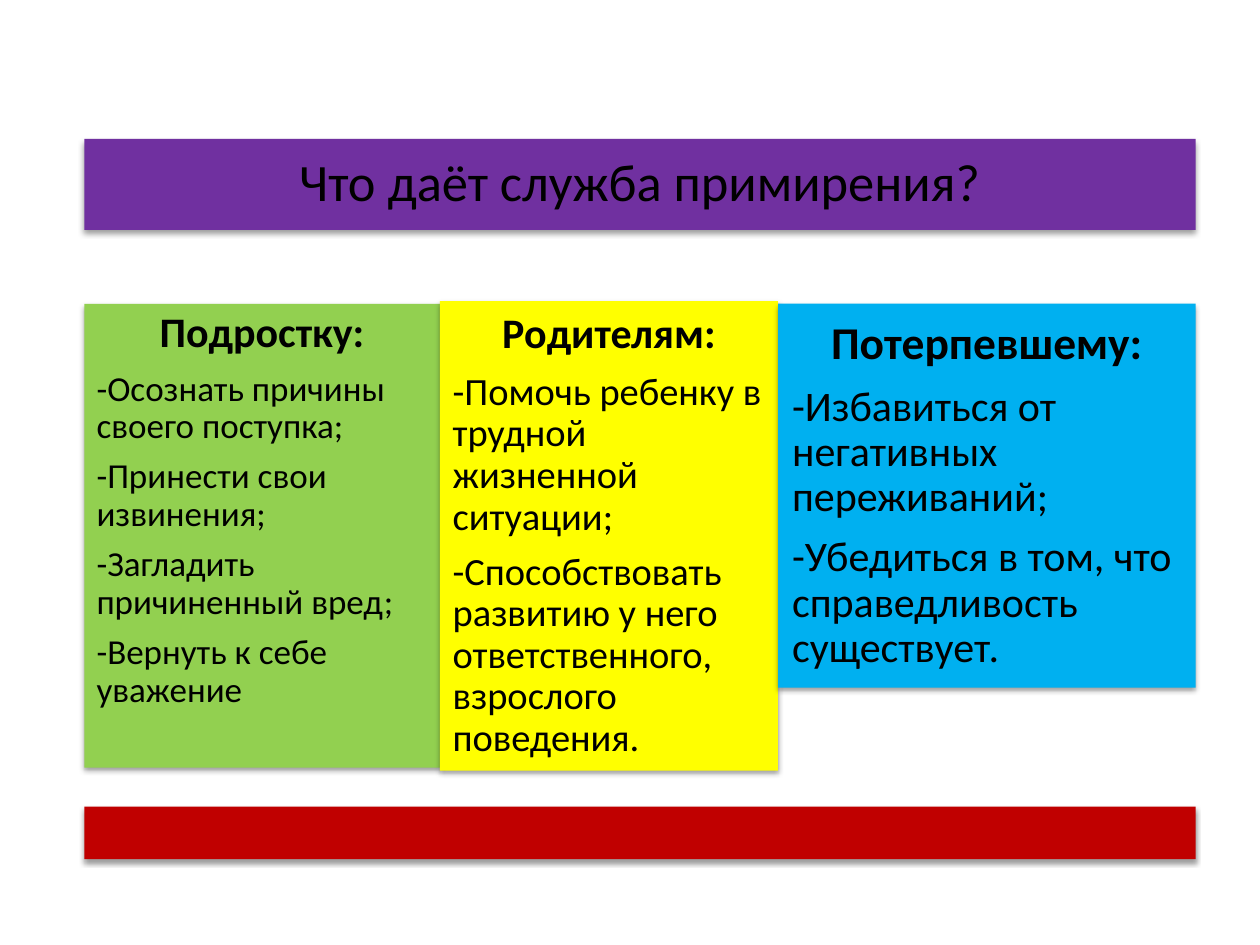
from lxml import etree
from pptx import Presentation
from pptx.dml.color import RGBColor
from pptx.enum.shapes import MSO_SHAPE
from pptx.enum.text import MSO_ANCHOR, MSO_AUTO_SIZE, PP_ALIGN
from pptx.oxml import parse_xml
from pptx.util import Pt

RECT = MSO_SHAPE.RECTANGLE
MIDDLE = MSO_ANCHOR.MIDDLE
NO_FIT = MSO_AUTO_SIZE.NONE
LEFT, CENTER = PP_ALIGN.LEFT, PP_ALIGN.CENTER
SHADOW = (
    '<a:outerShdw xmlns:a="http://schemas.openxmlformats.org/drawingml/2006/main" '
    'blurRad="39370" dist="20320" dir="5400000" rotWithShape="0">'
    '<a:srgbClr val="000000"><a:alpha val="38000"/></a:srgbClr></a:outerShdw>'
)


def paint(shape, color):
    shape.fill.solid()
    shape.fill.fore_color.rgb = RGBColor.from_string(color)
    shape.line.fill.background()
    shape.shadow.inherit = False
    effects = shape.element.spPr.find("{*}effectLst")
    effects.append(parse_xml(SHADOW))


def write(shape, rows, inset, extra=0):
    frame = shape.text_frame
    frame.word_wrap = True
    frame.auto_size = NO_FIT
    frame.vertical_anchor = MIDDLE
    frame.margin_left = frame.margin_right = frame.margin_top = Pt(inset)
    frame.margin_bottom = Pt(inset + extra)
    for i, (text, size, bold, align) in enumerate(rows):
        para = frame.paragraphs[0] if i == 0 else frame.add_paragraph()
        para.text = text
        para.alignment = align
        para.line_spacing = 0.9
        para.space_before = Pt(0)
        para.space_after = Pt(round(size * 0.35, 2))
        font = para.font
        font.name = "Calibri"
        font.size = Pt(size)
        font.bold = bold
        font.color.rgb = RGBColor.from_string("000000")


deck = Presentation()
deck.slide_width, deck.slide_height = Pt(720), Pt(540)
slide = deck.slides.add_slide(deck.slide_layouts[5])
edge, full = 48.2, 635

title = slide.shapes.title
title.left, title.top = Pt(edge), Pt(79.4)
title.width, title.height = Pt(full), Pt(52)
paint(title, "7030A0")
write(title, [("Что даёт служба примирения?", 30, False, CENTER)], 8.4)

cards = [
    (203.2, 173.6, 265, "92D050", 7, 29, "Подростку:", 24, 20, [
        "-Осознать причины своего поступка;",
        "-Принести свои извинения;",
        "-Загладить причиненный вред;",
        "-Вернуть к себе уважение",
    ]),
    (193.2, 172, 268.4, "FFFF00", 7.3, 0, "Родителям:", 24, 22, [
        "-Помочь ребенку в трудной жизненной ситуации;",
        "-Способствовать развитию у него ответственного, взрослого поведения.",
    ]),
    (238.6, 173.6, 219.4, "00B0F0", 8, 0, "Потерпевшему:", 26, 24, [
        "-Избавиться от негативных переживаний;",
        "-Убедиться в том, что справедливость существует.",
    ]),
]
left = edge
for width, top, height, color, inset, extra, head, big, small, points in cards:
    card = slide.shapes.add_shape(RECT, Pt(left), Pt(top), Pt(width), Pt(height))
    paint(card, color)
    rows = [(head, big, True, CENTER)]
    rows += [(point, small, False, LEFT) for point in points]
    write(card, rows, inset, extra)
    left += width

base = slide.shapes.add_shape(RECT, Pt(edge), Pt(461), Pt(full), Pt(30))
paint(base, "C00000")

deck.save("out.pptx")
